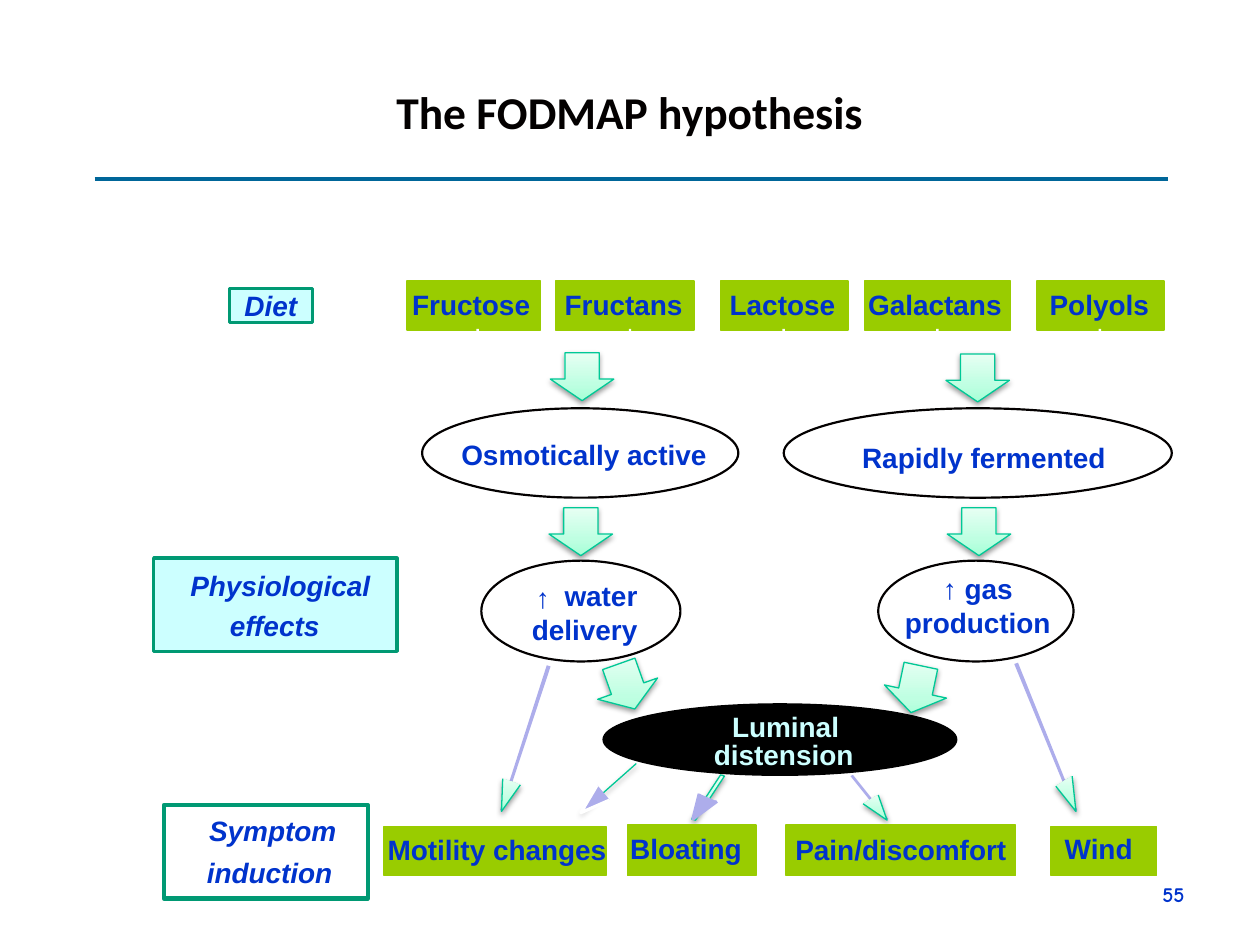
from copy import deepcopy
from dataclasses import dataclass

from lxml.etree import SubElement
from pptx import Presentation
from pptx.dml.color import RGBColor
from pptx.enum.shapes import MSO_CONNECTOR, MSO_SHAPE
from pptx.enum.text import MSO_ANCHOR, MSO_AUTO_SIZE, PP_ALIGN
from pptx.oxml.ns import qn
from pptx.util import Inches, Pt

COLUMNS, ROWS = 100, 75
UNIT = Inches(10) // COLUMNS
BLUE, GREEN, LILAC, TEAL, MINT = "0033CC", "99CC00", "ADADEB", "009973", "00C896"
PALE, WHITE, BLACK, INK = "CCFFFF", "FFFFFF", "000000", "030000"
MINT_STOPS = ((0, "A5FFD6"), (0.35, "BFFFE2"), (1, "E7FFF3"))
LABEL_HEIGHT = 2.7


@dataclass
class Area:
    left: float
    top: float
    width: float
    height: float


@dataclass
class Label:
    words: str
    left: float
    top: float
    width: float
    color: str = BLUE
    italic: bool = False
    wrap: bool = False


@dataclass
class Tile:
    area: Area
    label: Label


@dataclass
class Figure:
    area: Area
    fill: str | None
    line: str
    weight: float


@dataclass
class BlockArrow:
    center_x: float
    center_y: float
    turn: float = 0


@dataclass
class Outline:
    points: tuple
    fill: str | None = None
    line: str | None = None
    closed: bool = True


def units(*values: float) -> list[int]:
    return [round(value * UNIT) for value in values]


def hue(code: str) -> RGBColor:
    return RGBColor.from_string(code)


def paint(shape, fill: str | None, line: str | None, weight: float = 0) -> None:
    shape.shadow.inherit = False
    if fill:
        shape.fill.solid()
        shape.fill.fore_color.rgb = hue(fill)
    else:
        shape.fill.background()
    if line:
        shape.line.color.rgb = hue(line)
        shape.line.width = Pt(weight)
    else:
        shape.line.fill.background()


def add_shadow(shape) -> None:
    properties = shape._element.spPr
    effects = properties.find(qn("a:effectLst"))
    if effects is None:
        effects = SubElement(properties, qn("a:effectLst"))
    outer = SubElement(effects, qn("a:outerShdw"), blurRad=str(Pt(3.1)), dist=str(Pt(1.6)),
                       dir="5400000", rotWithShape="0")
    color = SubElement(outer, qn("a:srgbClr"), val=BLACK)
    SubElement(color, qn("a:alpha"), val="38000")


def paint_mint(shape) -> None:
    paint(shape, None, MINT, 0.75)
    shape.fill.gradient()
    shape.fill.gradient_angle = 90
    gradient = shape._element.spPr.find(qn("a:gradFill"))
    gradient.set("rotWithShape", "0")
    stop_list = gradient.find(qn("a:gsLst"))
    stop_list.append(deepcopy(stop_list[0]))
    for stop, (position, code) in zip(shape.fill.gradient_stops, MINT_STOPS):
        stop.position = position
        stop.color.rgb = hue(code)
    add_shadow(shape)


def add_figure(page, kind: MSO_SHAPE, figure: Figure):
    area = figure.area
    shape = page.shapes.add_shape(kind, *units(area.left, area.top, area.width, area.height))
    paint(shape, figure.fill, figure.line, figure.weight)
    return shape


def write(box, words: str, size: float = 16, font: str = "Arial", color: str = BLUE,
          italic: bool = False, align: PP_ALIGN = PP_ALIGN.CENTER) -> None:
    para = box.text_frame.paragraphs[0]
    para.alignment = align
    for index, line in enumerate(words.split("\n")):
        if index:
            para.add_line_break()
        span = para.add_run()
        span.text = line
        span.font.size = Pt(size)
        span.font.name = font
        span.font.bold = True
        span.font.italic = italic
        span.font.color.rgb = hue(color)


def tighten(box, wrap: bool) -> None:
    frame = box.text_frame
    frame.margin_left = frame.margin_right = frame.margin_top = frame.margin_bottom = 0
    frame.word_wrap = wrap
    frame.auto_size = MSO_AUTO_SIZE.SHAPE_TO_FIT_TEXT


def add_box(page, area: Area):
    box = page.shapes.add_textbox(*units(area.left, area.top, area.width, area.height))
    box.text_frame.word_wrap = True
    return box


def add_label(page, label: Label) -> None:
    box = add_box(page, Area(label.left, label.top, label.width, LABEL_HEIGHT))
    tighten(box, label.wrap)
    write(box, label.words, color=label.color, italic=label.italic)


def add_outline(page, outline: Outline) -> None:
    start, *rest = [units(*point) for point in outline.points]
    builder = page.shapes.build_freeform(*start)
    builder.add_line_segments(rest, close=outline.closed)
    shape = builder.convert_to_shape()
    if outline.fill:
        paint(shape, outline.fill, outline.line, 1.88)
    else:
        paint_mint(shape)


def add_block_arrow(page, arrow: BlockArrow) -> None:
    width, height = 5.04, 3.8
    shape = page.shapes.add_shape(MSO_SHAPE.DOWN_ARROW, *units(
        arrow.center_x - width / 2, arrow.center_y - height / 2, width, height))
    shape.adjustments[0], shape.adjustments[1] = 0.54, 0.45
    shape.rotation = arrow.turn
    paint_mint(shape)


def add_line(page, ends: tuple, color: str, weight: float):
    line = page.shapes.add_connector(MSO_CONNECTOR.STRAIGHT, *units(*ends))
    line.line.color.rgb = hue(color)
    line.line.width = Pt(weight)
    SubElement(line._element.spPr, qn("a:effectLst"))
    return line


OUTLINES = [
    Outline(((39.7, 64.3), (39.9, 64.4), (43.7, 52.9), (43.4, 52.8)), LILAC),
    Outline(((39.9, 61.8), (39.8, 64.4), (41.3, 62.3)), closed=False),
    Outline(((54.9, 65), (55.2, 65.1), (57.5, 61.6), (57.2, 61.5))),
    Outline(((55.5, 63), (55, 65), (56.9, 63.6)), LILAC, LILAC, False),
    Outline(((70.3, 65.1), (70.5, 65), (67.7, 61.5), (67.5, 61.6)), LILAC),
    Outline(((68.5, 63.8), (70.4, 65.1), (69.7, 63.1)), closed=False),
    Outline(((85.3, 64.4), (85.5, 64.3), (80.8, 52.6), (80.5, 52.7)), LILAC),
    Outline(((83.8, 62.4), (85.4, 64.4), (85.1, 61.6)), closed=False),
]
MOTILITY_HEAD = Outline(((47.4, 62.3), (46.1, 64.5), (48.4, 63.5)), LILAC, WHITE, False)
SUGARS = [("Fructose", 32.3, 10.6, 32.7, 9.4), ("Fructans", 44.1, 11, 44.8, 9.4),
          ("Lactose", 57.2, 10.1, 57.9, 8.4), ("Galactans", 68.6, 11.6, 68.9, 10.6),
          ("Polyols", 82.3, 10.1, 83.3, 7.9)]
TILES = [Tile(Area(left, 22.3, width, 3.9), Label(words, label_left, 22.8, label_width))
         for words, left, width, label_left, label_width in SUGARS] + [
    Tile(Area(30.5, 65.6, 17.6, 3.9), Label("Motility changes", 30.7, 66.1, 17.5, wrap=True)),
    Tile(Area(49.8, 65.5, 10.2, 4), Label("Bloating", 50, 66, 8.9)),
    Tile(Area(62.4, 65.5, 18.2, 4), Label("Pain/discomfort", 62.9, 66.1, 17.2, wrap=True)),
    Tile(Area(83.4, 65.6, 8.4, 3.9), Label("Wind", 84.5, 66, 5.4)),
]
FRAMES = [Figure(Area(13, 63.9, 16.2, 7.4), None, TEAL, 2.5),
          Figure(Area(12.2, 44.3, 19.3, 7.4), PALE, TEAL, 2)]
DIET = Figure(Area(18.2, 22.9, 6.6, LABEL_HEIGHT), PALE, TEAL, 2)
ELLIPSES = [Figure(Area(47.9, 55.9, 28, 5.6), BLACK, BLACK, 1.25)] + [
    Figure(area, WHITE, INK, 1.25) for area in (
        Area(33.5, 32.4, 25.1, 7.1), Area(62.2, 32.4, 30.8, 7.1),
        Area(38.2, 44.5, 15.8, 8), Area(69.7, 44.5, 15.5, 8))]
ARROWS = [BlockArrow(49.75, 54.48, -19.6), BlockArrow(72.7, 54.7, 11.9),
          BlockArrow(46.2, 29.9), BlockArrow(77.6, 30),
          BlockArrow(46.1, 42.2), BlockArrow(77.7, 42.2)]
LABELS = [
    Label("Symptom ", 16.3, 64.6, 10.7, italic=True),
    Label("induction", 16.4, 67.9, 10, italic=True),
    Label("Physiological ", 14.8, 45.1, 14.9, italic=True),
    Label("effects", 18.2, 48.3, 7.2, italic=True),
    Label("Luminal ", 57.8, 56.3, 9.1, PALE),
    Label("distension", 56.6, 58.5, 11.2, PALE, wrap=True),
    Label("Osmotically active", 36.6, 34.7, 19.5),
    Label("Rapidly fermented ", 68.4, 35, 20),
    Label("↑", 42.1, 46.1, 2), Label("water ", 44.5, 45.9, 6.4),
    Label("delivery", 42.2, 48.6, 8.4),
]
TICK_LEFTS = (37.8, 49.9, 62.1, 74.3, 87.2)


def main() -> None:
    deck = Presentation()
    deck.slide_width, deck.slide_height = units(COLUMNS, ROWS)
    page = deck.slides.add_slide(deck.slide_layouts[6])
    add_line(page, (7.5, 14.2, 92.7, 14.2), "006699", 2.25)
    for outline in OUTLINES:
        add_outline(page, outline)
    add_shadow(add_line(page, (50.5, 60.6, 46.1, 64.5), MINT, 0.75))
    add_outline(page, MOTILITY_HEAD)
    for tile in TILES:
        add_figure(page, MSO_SHAPE.RECTANGLE, Figure(tile.area, GREEN, GREEN, 0.88))
        add_label(page, tile.label)
    for left in TICK_LEFTS:
        add_figure(page, MSO_SHAPE.RECTANGLE, Figure(Area(left, 26.1, 0.2, 1.6), WHITE, None, 0))
    for frame in FRAMES:
        add_figure(page, MSO_SHAPE.RECTANGLE, frame)
    diet = add_figure(page, MSO_SHAPE.RECTANGLE, DIET)
    tighten(diet, True)
    write(diet, "Diet", italic=True)
    for ellipse in ELLIPSES:
        add_figure(page, MSO_SHAPE.OVAL, ellipse)
    for arrow in ARROWS:
        add_block_arrow(page, arrow)
    for label in LABELS:
        add_label(page, label)
    write(add_box(page, Area(70.5, 44.9, 14.2, 6.4)), "↑ gas\nproduction")
    title = add_box(page, Area(7.5, 4.2, 85, 9.2))
    title.text_frame.vertical_anchor = MSO_ANCHOR.MIDDLE
    write(title, "The FODMAP hypothesis", 26, "Calibri", INK)
    number = add_box(page, Area(71.7, 69.5, 23.3, 4))
    write(number, "55", 12, "Comic Neue", align=PP_ALIGN.RIGHT)
    deck.save("out.pptx")


if __name__ == "__main__":
    main()
